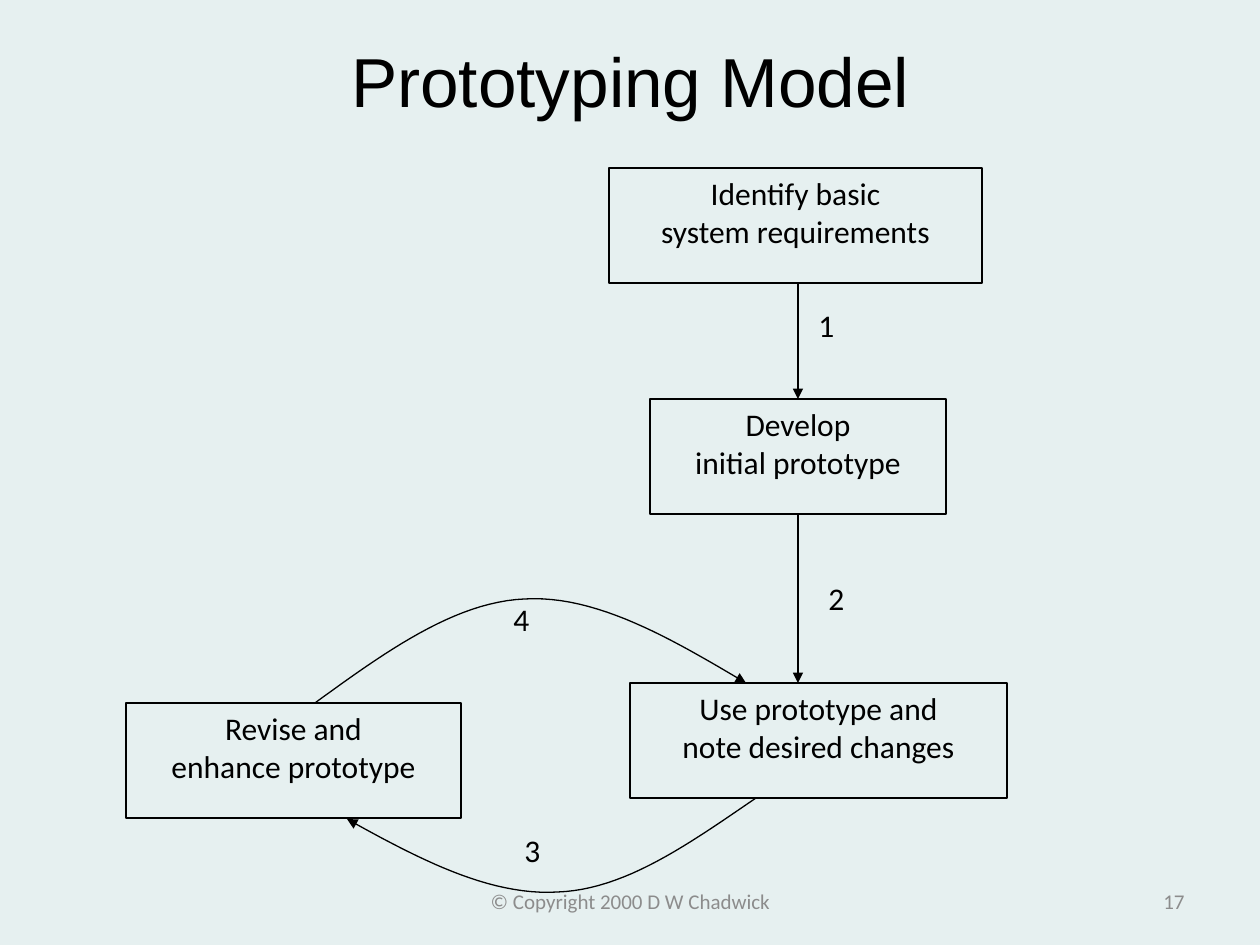
import pptx
import pptx.util
import pptx.dml.color
import pptx.enum.shapes
import pptx.enum.text
import pptx.oxml.ns
from lxml import etree

RGB = pptx.dml.color.RGBColor
BLACK = RGB(0x00, 0x00, 0x00)
GREY = RGB(0x8C, 0x8C, 0x8C)
BACKGROUND = RGB(0xE6, 0xF0, 0xF0)

ALIGN = pptx.enum.text.PP_ALIGN
ANCHOR = pptx.enum.text.MSO_ANCHOR
TOP, BOTTOM = 0, 2
EMU_PER_PX = 914400 / 126


def px(length):
    return pptx.util.Emu(round(length * EMU_PER_PX))


def bezier(p0, p1, p2, p3, steps=24):
    """Points along a cubic curve, without its first point."""
    points = []
    for step in range(1, steps + 1):
        t = step / steps
        weights = ((1 - t) ** 3, 3 * t * (1 - t) ** 2, 3 * t * t * (1 - t), t ** 3)
        points.append(tuple(sum(w * p[axis] for w, p in zip(weights, (p0, p1, p2, p3)))
                            for axis in (0, 1)))
    return points


class FlowSlide:
    """Style of the flow diagram and the slide it is drawn on."""
    font = "Calibri"
    text_size = 18
    line_width = 0.75
    box_height = 115

    def __init__(self, slide):
        self.slide = slide
        self.shapes = slide.shapes
        slide.background.fill.solid()
        slide.background.fill.fore_color.rgb = BACKGROUND

    def fill_text(self, frame, text, size, color=BLACK, align=ALIGN.LEFT,
                  anchor=ANCHOR.TOP, font=None):
        frame.text = text
        frame.word_wrap = True
        frame.vertical_anchor = anchor
        for paragraph in frame.paragraphs:
            paragraph.alignment = align
            for run in paragraph.runs:
                run.font.name = font or self.font
                run.font.size = pptx.util.Pt(size)
                run.font.color.rgb = color

    def outline(self, shape):
        shape.line.color.rgb = BLACK
        shape.line.width = pptx.util.Pt(self.line_width)

    def add_arrowhead(self, shape):
        line = shape.line._get_or_add_ln()
        etree.SubElement(line, pptx.oxml.ns.qn("a:tailEnd"), type="triangle")

    def title(self, text, left, top, width, height):
        title = self.shapes.title
        title.left, title.top, title.width, title.height = map(px, (left, top, width, height))
        self.fill_text(title.text_frame, text, 39.6, align=ALIGN.CENTER,
                       anchor=ANCHOR.MIDDLE, font="Arial")

    def text(self, text, left, top, width, height, **style):
        box = self.shapes.add_textbox(px(left), px(top), px(width), px(height))
        self.fill_text(box.text_frame, text, style.pop("size", self.text_size), **style)

    def activity(self, text, left, top, width):
        box = self.shapes.add_shape(pptx.enum.shapes.MSO_SHAPE.RECTANGLE,
                                    px(left), px(top), px(width), px(self.box_height))
        box.shadow.inherit = False
        box.fill.background()
        self.outline(box)
        self.fill_text(box.text_frame, text, self.text_size, align=ALIGN.CENTER)
        return box

    def arrow(self, x, top, bottom):
        arrow = self.shapes.add_connector(pptx.enum.shapes.MSO_CONNECTOR.STRAIGHT,
                                          px(x), px(top), px(x), px(bottom))
        self.outline(arrow)
        self.add_arrowhead(arrow)
        etree.SubElement(arrow._element.spPr, pptx.oxml.ns.qn("a:effectLst"))
        return arrow

    def curved_arrow(self, start, *segments):
        builder = self.shapes.build_freeform(px(start[0]), px(start[1]))
        for segment in segments:
            points = bezier(start, *segment)
            builder.add_line_segments([(px(x), px(y)) for x, y in points], close=False)
            start = segment[-1]
        curve = builder.convert_to_shape()
        curve.shadow.inherit = False
        curve.fill.background()
        self.outline(curve)
        self.add_arrowhead(curve)


def main():
    deck = pptx.Presentation()
    deck.slide_width, deck.slide_height = px(1260), px(945)
    flow = FlowSlide(deck.slides.add_slide(deck.slide_layouts[5]))

    # Title and footer
    flow.title("Prototyping Model", 95, 32, 1071, 95)
    footer = dict(size=12, color=GREY, anchor=ANCHOR.MIDDLE)
    flow.text("© Copyright 2000 D W Chadwick", 431, 876, 399, 50, align=ALIGN.CENTER, **footer)
    flow.text("17", 903, 876, 294, 50, align=ALIGN.RIGHT, **footer)

    # Activities
    flow.activity("Identify basic\nsystem requirements", 609, 168, 373)
    develop = flow.activity("Develop\ninitial prototype", 650, 399, 296)
    flow.activity("Use prototype and\nnote desired changes", 630, 683, 377)
    flow.activity("Revise and\nenhance prototype", 126, 703, 335)

    # Steps down to the first use
    flow.arrow(798, 283, 399).end_connect(develop, TOP)
    flow.arrow(798, 514, 683).begin_connect(develop, BOTTOM)

    # Loop between use and revision
    flow.curved_arrow((756, 798),
                      ((690, 843), (625, 890), (557, 892)),
                      ((489, 896), (417, 858), (347, 819)))
    flow.curved_arrow((315, 703),
                      ((384, 653), (454, 602), (525, 599)),
                      ((597, 595), (672, 639), (746, 683)))

    # Step numbers
    for number, left, top in (("1", 806, 300), ("2", 816, 573),
                              ("3", 512, 825), ("4", 501, 594)):
        flow.text(number, left, top, 47, 63)

    deck.save("out.pptx")


if __name__ == "__main__":
    main()
